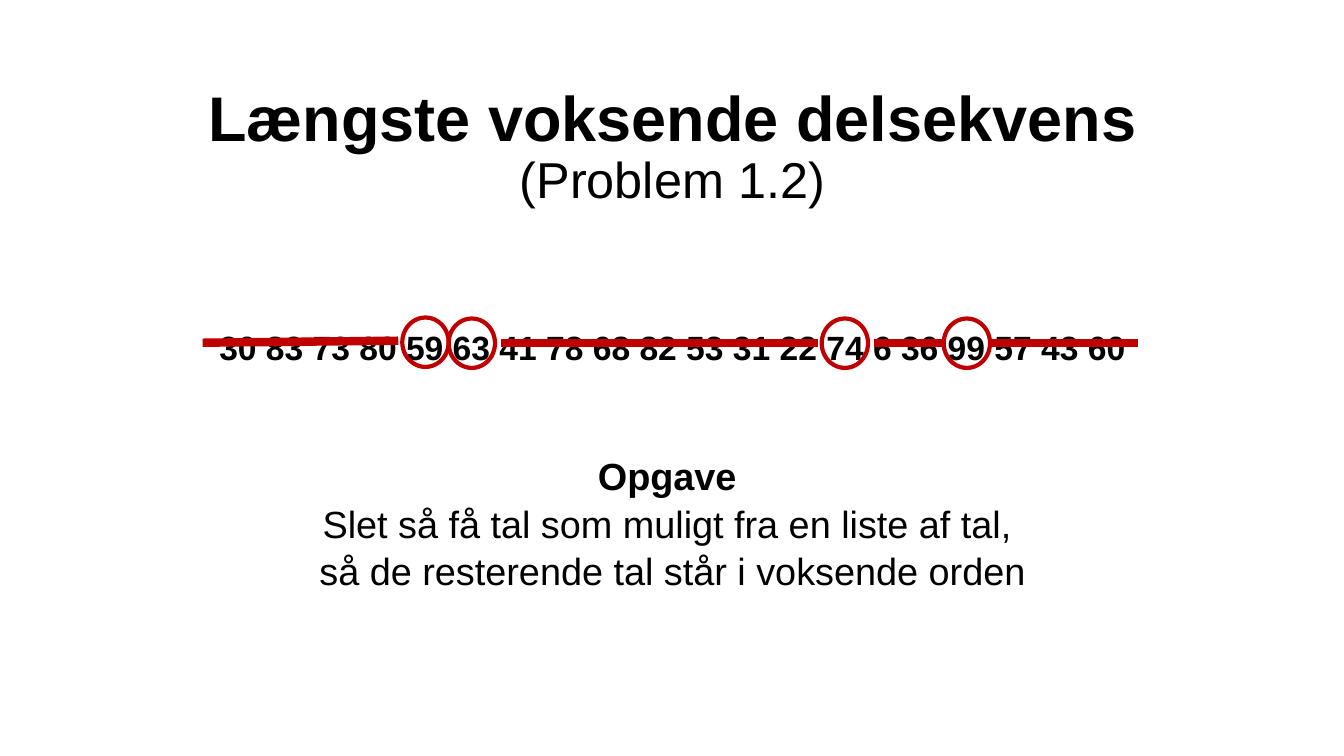
from dataclasses import dataclass

from lxml import etree
from pptx import Presentation
from pptx.dml.color import RGBColor
from pptx.enum.shapes import MSO_CONNECTOR, MSO_SHAPE
from pptx.enum.text import MSO_ANCHOR, PP_ALIGN
from pptx.oxml.ns import qn
from pptx.util import Inches, Pt

STRAIGHT = MSO_CONNECTOR.STRAIGHT
OVAL = MSO_SHAPE.OVAL
CENTER = PP_ALIGN.CENTER
TOP, BOTTOM = MSO_ANCHOR.TOP, MSO_ANCHOR.BOTTOM


@dataclass(frozen=True)
class Theme:
    font: str = "Arial"
    ink: RGBColor = RGBColor(0, 0, 0)
    mark: RGBColor = RGBColor(0xC0, 0, 0)
    title: int = 45
    subtitle: int = 36
    body: int = 27
    numbers: int = 24
    strike: int = 6
    ring: int = 3


def apply(obj, values):
    for name, value in values.items():
        setattr(obj, name, value)


class SlideBuilder:
    def __init__(self, slide, theme):
        self.s = slide
        self.theme = theme

    def text(self, box, lines, anchor=TOP, spacing=1.0):
        sp = self.s.shapes.add_textbox(*map(Inches, box))
        tf = sp.text_frame
        apply(tf, {"word_wrap": True, "vertical_anchor": anchor,
                   "margin_left": Inches(0.07), "margin_right": Inches(0.07),
                   "margin_top": 0, "margin_bottom": 0})
        p = tf.paragraphs[0]
        apply(p, {"alignment": CENTER, "line_spacing": spacing})
        for i, (text, size, bold) in enumerate(lines):
            if i:
                p.add_line_break()
            r = p.add_run()
            r.text = text
            apply(r.font, {"name": self.theme.font, "size": Pt(size), "bold": bold})
            r.font.color.rgb = self.theme.ink
        return tf

    def stroke(self, line, width):
        line.color.rgb = self.theme.mark
        line.width = Pt(width)

    def strike(self, x1, y1, x2, y2):
        cx = self.s.shapes.add_connector(STRAIGHT, *map(Inches, (x1, y1, x2, y2)))
        self.stroke(cx.line, self.theme.strike)
        etree.SubElement(cx._element.spPr, qn("a:effectLst"))

    def ring(self, x, y):
        sp = self.s.shapes.add_shape(OVAL, *map(Inches, (x, y, 0.46, 0.49)))
        sp.shadow.inherit = False
        sp.fill.background()
        self.stroke(sp.line, self.theme.ring)


def main():
    prs = Presentation()
    apply(prs, {"slide_width": Inches(13.33), "slide_height": Inches(7.5)})
    theme = Theme()
    slide = SlideBuilder(prs.slides.add_slide(prs.slide_layouts[6]), theme)

    slide.text((1.67, 3.24, 10, 0.38), [
        ("30 83 73 80 59 63 41 78 68 82 53 31 22 74 6 36 99 57 43 60", theme.numbers, True),
    ])
    slide.text((1.67, 4.47, 10, 1.36), [
        ("Opgave ", theme.body, True),
        ("Slet så få tal som muligt fra en liste af tal, ", theme.body, False),
        ("så de resterende tal står i voksende orden", theme.body, False),
    ], spacing=1.05)
    title = slide.text((1.67, 0.79, 10, 1.33), [
        ("Længste voksende delsekvens", theme.title, True),
        ("(Problem 1.2)", theme.subtitle, False),
    ], BOTTOM, 0.9)
    apply(title, {"margin_top": Inches(0.04), "margin_bottom": Inches(0.04)})

    strike_y = 3.4
    slide.strike(2.01, strike_y, 3.95, 3.38)
    for x1, x2 in ((4.97, 8.11), (8.67, 9.34), (9.83, 11.29)):
        slide.strike(x1, strike_y, x2, strike_y)
    for x, y in ((3.99, 3.15), (4.45, 3.16), (8.15, 3.16), (9.36, 3.16)):
        slide.ring(x, y)

    prs.save("out.pptx")


if __name__ == "__main__":
    main()
